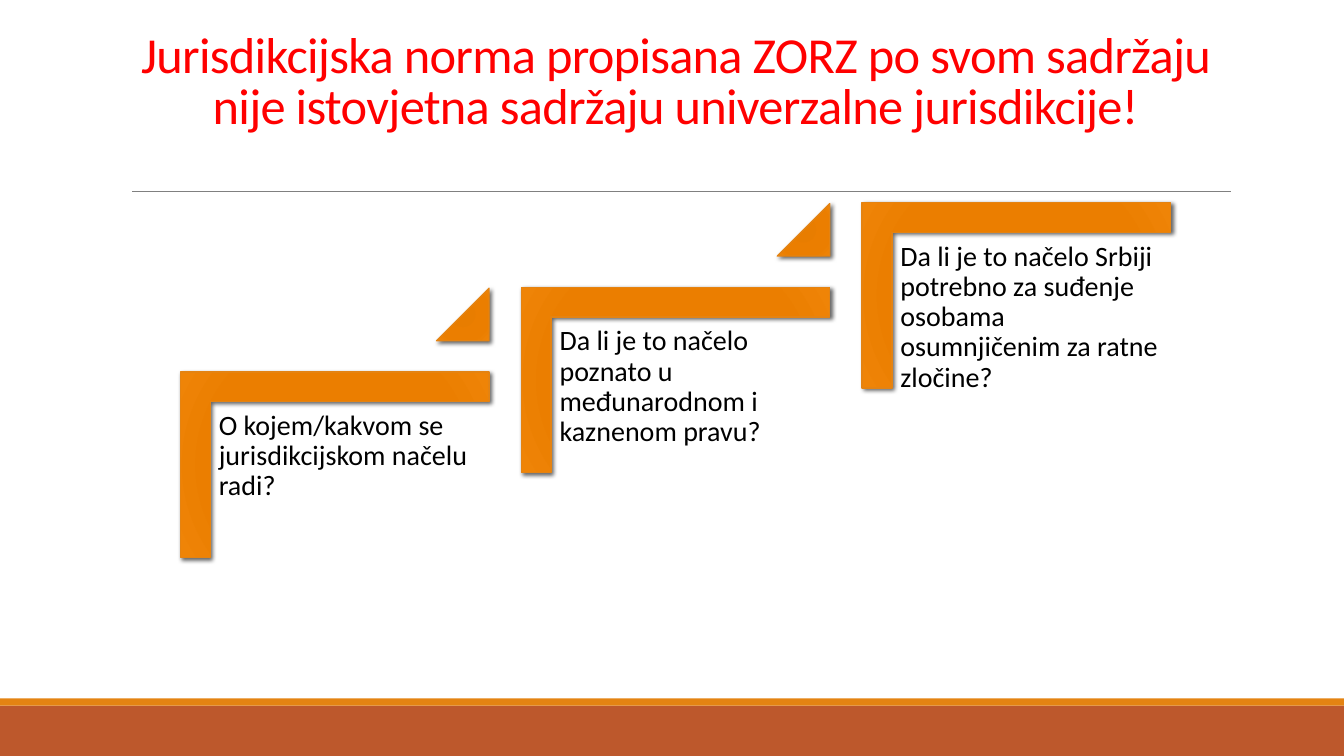
from lxml import etree
from pptx import Presentation
from pptx.dml.color import RGBColor
from pptx.enum import shapes, text
from pptx.oxml import parse_xml
from pptx.oxml.ns import nsdecls, qn
from pptx.util import Inches, Pt

RED = RGBColor(0xFF, 0x00, 0x00)
BLACK = RGBColor(0x00, 0x00, 0x00)
GRAY = RGBColor(0x80, 0x80, 0x80)
ORANGE = RGBColor(0xE4, 0x83, 0x12)
RUST = RGBColor(0xBD, 0x58, 0x2C)
GRADIENT = [
    (0, RGBColor(0xE5, 0x7B, 0x00)),
    (34, RGBColor(0xE8, 0x7D, 0x00)),
    (70, RGBColor(0xEB, 0x7E, 0x00)),
    (100, RGBColor(0xEF, 0x84, 0x07)),
]
FONT = "Calibri"

TITLE = ("Jurisdikcijska norma propisana ZORZ po svom sadržaju "
         "nije istovjetna sadržaju univerzalne jurisdikcije!")
QUESTIONS = [
    "O kojem/kakvom se jurisdikcijskom načelu radi?",
    "Da li je to načelo poznato u međunarodnom i kaznenom pravu?",
    "Da li je to načelo Srbiji potrebno za suđenje osobama "
    "osumnjičenim za ratne zločine?",
]
STEP_RIGHT, STEP_UP = 3.38, 0.84


def format_paragraph(paragraph, size, color, spacing):
    paragraph.line_spacing = spacing
    for run in paragraph.runs:
        run.font.name = FONT
        run.font.size = Pt(size)
        run.font.color.rgb = color


def add_title(slide):
    title = slide.shapes.title
    title.left, title.top = Inches(1.2), Inches(0.31)
    title.width, title.height = Inches(11), Inches(1.59)
    frame = title.text_frame
    frame.text = TITLE
    frame.word_wrap = True
    frame.auto_size = text.MSO_AUTO_SIZE.NONE
    frame.vertical_anchor = text.MSO_ANCHOR.BOTTOM
    frame.margin_bottom = Inches(0.56)
    paragraph = frame.paragraphs[0]
    paragraph.alignment = text.PP_ALIGN.CENTER
    format_paragraph(paragraph, 36, RED, 0.85)
    paragraph.runs[0].font._element.set("spc", "-50")


def add_band(slide, top, height, color):
    band = slide.shapes.add_shape(
        shapes.MSO_SHAPE.RECTANGLE, 0, Inches(top), Inches(13.33), Inches(height))
    band.shadow.inherit = False
    band.fill.solid()
    band.fill.fore_color.rgb = color
    band.line.fill.background()


def add_rule(slide):
    rule = slide.shapes.add_connector(
        shapes.MSO_CONNECTOR.STRAIGHT,
        Inches(1.31), Inches(1.9), Inches(12.21), Inches(1.9))
    rule.line.color.rgb = GRAY
    rule.line.width = Pt(0.5)
    etree.SubElement(rule._element.spPr, qn("a:effectLst"))


def add_glossy_shape(slide, kind, left, top, width, height, adjustments):
    """Add a preset shape with a radial orange gradient and a soft shadow."""
    shape = slide.shapes.add_shape(
        kind, Inches(left), Inches(top), Inches(width), Inches(height))
    for index, value in enumerate(adjustments):
        shape.adjustments[index] = value
    shape.line.color.rgb = ORANGE
    shape.line.width = Pt(1)
    stops = "".join(
        f'<a:gs pos="{position * 1000}"><a:srgbClr val="{color}"/></a:gs>'
        for position, color in GRADIENT)
    properties = shape._element.spPr
    properties.find(qn("a:prstGeom")).addnext(parse_xml(
        f'<a:gradFill {nsdecls("a")} rotWithShape="1"><a:gsLst>{stops}</a:gsLst>'
        '<a:path path="circle"><a:fillToRect l="100000" t="100000" '
        'r="100000" b="100000"/></a:path></a:gradFill>'))
    properties.append(parse_xml(
        f'<a:effectLst {nsdecls("a")}><a:outerShdw blurRad="{Pt(3)}" '
        f'dist="{Pt(2)}" dir="2700000" algn="br" rotWithShape="0">'
        '<a:srgbClr val="000000"><a:alpha val="60000"/></a:srgbClr>'
        '</a:outerShdw></a:effectLst>'))
    return shape


def add_question(slide, question, left, top):
    box = slide.shapes.add_textbox(
        Inches(left), Inches(top), Inches(2.76), Inches(2.42))
    frame = box.text_frame
    frame.word_wrap = True
    frame.margin_left = frame.margin_right = Inches(0.08)
    frame.margin_top = frame.margin_bottom = Inches(0.08)
    frame.text = question
    format_paragraph(frame.paragraphs[0], 20, BLACK, 0.9)


def add_step(slide, index, question):
    right, up = index * STEP_RIGHT, index * STEP_UP
    corner = add_glossy_shape(
        slide, shapes.MSO_SHAPE.CORNER,
        2.4 + right, 3.08 - up, 1.84, 3.06, [0.161, 0.161])
    corner.rotation = 90
    add_question(slide, question, 2.09 + right, 4 - up)
    if index < len(QUESTIONS) - 1:
        add_glossy_shape(
            slide, shapes.MSO_SHAPE.ISOSCELES_TRIANGLE,
            4.33 + right, 2.86 - up, 0.52, 0.52, [1])


def main():
    presentation = Presentation()
    presentation.slide_width = Inches(13.33)
    presentation.slide_height = Inches(7.5)
    slide = presentation.slides.add_slide(presentation.slide_layouts[5])
    add_band(slide, 7, 0.5, RUST)
    add_band(slide, 6.93, 0.07, ORANGE)
    add_rule(slide)
    add_title(slide)
    for index, question in enumerate(QUESTIONS):
        add_step(slide, index, question)
    presentation.save("out.pptx")


if __name__ == "__main__":
    main()
